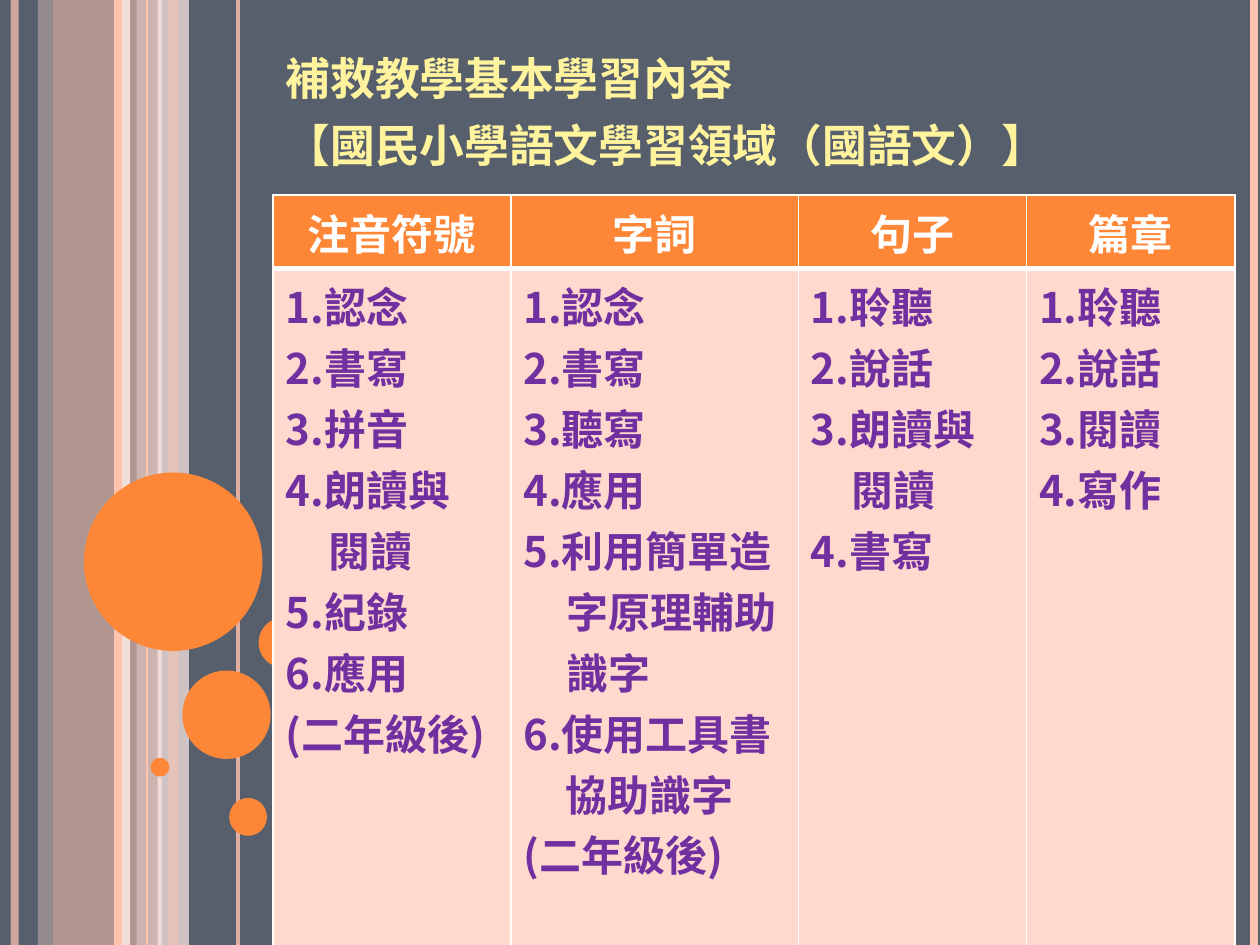
from dataclasses import dataclass

from lxml import etree
from pptx import Presentation
from pptx.dml.color import RGBColor
from pptx.enum.shapes import MSO_CONNECTOR, MSO_SHAPE
from pptx.enum.text import MSO_ANCHOR, MSO_AUTO_SIZE, PP_ALIGN
from pptx.oxml.ns import qn
from pptx.util import Pt

RECTANGLE = MSO_SHAPE.RECTANGLE
OVAL = MSO_SHAPE.OVAL
STRAIGHT = MSO_CONNECTOR.STRAIGHT
BOTTOM = MSO_ANCHOR.BOTTOM
NO_AUTOFIT = MSO_AUTO_SIZE.NONE
LEFT = PP_ALIGN.LEFT
CENTER = PP_ALIGN.CENTER

SLATE = RGBColor(0x57, 0x5F, 0x6D)
ORANGE = RGBColor(0xFE, 0x86, 0x37)
SALMON = RGBColor(0xFE, 0xC3, 0xAE)
PEACH = RGBColor(0xFF, 0xD9, 0xCE)
CREAM = RGBColor(0xFF, 0xED, 0xE8)
YELLOW = RGBColor(0xFF, 0xF3, 0x9D)
PURPLE = RGBColor(0x70, 0x30, 0xA0)
WHITE = RGBColor(0xFF, 0xFF, 0xFF)

FONT = "Noto Sans CJK SC"
SLIDE_WIDTH, SLIDE_HEIGHT = 720, 540
TABLE_LEFT, TABLE_TOP = 156, 111.5
HEADER_HEIGHT, BODY_HEIGHT = 42, 390


@dataclass
class Band:
    left: float
    width: float
    color: RGBColor
    opacity: int


@dataclass
class Stripe:
    x: float
    width: float
    color: RGBColor
    opacity: int = 100


@dataclass
class Bubble:
    left: float
    top: float
    diameter: float


@dataclass
class Item:
    text: str
    margin: float = 0
    indent: float = 0


@dataclass
class Column:
    heading: str
    width: float
    items: list[Item]


BANDS = [
    Band(30, 48, SALMON, 54),
    Band(21.6, 8.2, PEACH, 36),
    Band(78, 14.4, PEACH, 70),
    Band(90, 18, CREAM, 71),
]
STRIPES = [
    Stripe(8.4, 4.5, SALMON, 73),
    Stripe(72, 4.5, CREAM, 83),
    Stripe(67.2, 4.5, SALMON),
    Stripe(136, 2.25, SALMON, 82),
    Stripe(84, 0.75, SALMON),
    Stripe(716.4, 4.5, SALMON),
]
FRONT_BAND = Band(96, 6, SALMON, 51)
BUBBLES = [
    Bubble(48, 270, 102),
    Bubble(104.2, 383.2, 50.5),
    Bubble(86, 433, 10.8),
    Bubble(131, 456, 21.6),
    Bubble(147.8, 352.8, 28.8),
]
COLUMNS = [
    Column("注音符號", 136, [
        Item("1.認念"), Item("2.書寫"), Item("3.拼音"), Item("4.朗讀與"),
        Item("閱讀", 24.5), Item("5.紀錄"), Item("6.應用"), Item("(二年級後)"),
    ]),
    Column("字詞", 164.2, [
        Item("1.認念"), Item("2.書寫"), Item("3.聽寫"), Item("4.應用"),
        Item("5.利用簡單造字原理輔助識字", 24.5, -24.5),
        Item("6.使用工具書協助識字", 24, -24),
        Item("(二年級後)", 24, -24),
    ]),
    Column("句子", 130.5, [
        Item("1.聆聽"), Item("2.說話"),
        Item("3.朗讀與閱讀", 23, -23), Item("4.書寫"),
    ]),
    Column("篇章", 119, [
        Item("1.聆聽"), Item("2.說話"), Item("3.閱讀"), Item("4.寫作"),
    ]),
]


def set_opacity(properties, percent: int) -> None:
    if percent < 100:
        color = next(properties.iter(qn("a:srgbClr")))
        etree.SubElement(color, qn("a:alpha"), val=str(percent * 1000))


def add_filled_shape(slide, kind, left: float, top: float, width: float,
                     height: float, color: RGBColor, opacity: int = 100) -> None:
    shape = slide.shapes.add_shape(kind, Pt(left), Pt(top), Pt(width), Pt(height))
    shape.shadow.inherit = False
    shape.fill.solid()
    shape.fill.fore_color.rgb = color
    shape.line.fill.background()
    set_opacity(shape._element.spPr, opacity)


def add_band(slide, band: Band) -> None:
    add_filled_shape(slide, RECTANGLE, band.left, 0, band.width, SLIDE_HEIGHT,
                     band.color, band.opacity)


def add_stripe(slide, stripe: Stripe) -> None:
    connector = slide.shapes.add_connector(
        STRAIGHT, Pt(stripe.x), Pt(0), Pt(stripe.x), Pt(SLIDE_HEIGHT))
    connector.line.color.rgb = stripe.color
    connector.line.width = Pt(stripe.width)
    properties = connector._element.spPr
    set_opacity(properties, stripe.opacity)
    etree.SubElement(properties, qn("a:effectLst"))


def format_runs(paragraph, size: float, color: RGBColor, small_caps: bool = False) -> None:
    for run in paragraph.runs:
        run.font.name = FONT
        run.font.size = Pt(size)
        run.font.bold = True
        run.font.color.rgb = color
        properties = run._r.get_or_add_rPr()
        properties.find(qn("a:latin")).addnext(
            properties.makeelement(qn("a:ea"), {"typeface": FONT}))
        if small_caps:
            properties.set("cap", "small")


def add_title(slide) -> None:
    title = slide.shapes.title
    title.left, title.top, title.width, title.height = Pt(156), Pt(15), Pt(533), Pt(88)
    frame = title.text_frame
    frame.text = "補救教學基本學習內容\v【國民小學語文學習領域（國語文）】"
    frame.auto_size = NO_AUTOFIT
    frame.vertical_anchor = BOTTOM
    paragraph = frame.paragraphs[0]
    paragraph.alignment = LEFT
    format_runs(paragraph, 32, YELLOW, small_caps=True)


def style_cell(cell, fill: RGBColor, top_border: float, bottom_border: float) -> None:
    properties = cell._tc.get_or_add_tcPr()
    borders = {"lnL": 1, "lnR": 1, "lnT": top_border, "lnB": bottom_border}
    for side, width in borders.items():
        line = etree.SubElement(properties, qn(f"a:{side}"), w=str(Pt(width)))
        solid = etree.SubElement(line, qn("a:solidFill"))
        etree.SubElement(solid, qn("a:srgbClr"), val=str(WHITE))
    cell.fill.solid()
    cell.fill.fore_color.rgb = fill


def add_content_table(slide) -> None:
    width = sum(column.width for column in COLUMNS)
    table = slide.shapes.add_table(
        2, len(COLUMNS), Pt(TABLE_LEFT), Pt(TABLE_TOP), Pt(width),
        Pt(HEADER_HEIGHT + BODY_HEIGHT)).table
    table.horz_banding = False
    table.rows[0].height, table.rows[1].height = Pt(HEADER_HEIGHT), Pt(BODY_HEIGHT)
    for index, column in enumerate(COLUMNS):
        table.columns[index].width = Pt(column.width)
        header, body = table.cell(0, index), table.cell(1, index)
        style_cell(header, ORANGE, 1, 3)
        style_cell(body, PEACH, 3, 1)
        header.text_frame.text = column.heading
        heading = header.text_frame.paragraphs[0]
        heading.alignment = CENTER
        format_runs(heading, 24, WHITE)
        body.text_frame.text = "\n".join(item.text for item in column.items)
        for paragraph, item in zip(body.text_frame.paragraphs, column.items):
            properties = paragraph._p.get_or_add_pPr()
            properties.set("marL", str(Pt(item.margin)))
            properties.set("indent", str(Pt(item.indent)))
            format_runs(paragraph, 24, PURPLE)


def main() -> None:
    presentation = Presentation()
    presentation.slide_width, presentation.slide_height = Pt(SLIDE_WIDTH), Pt(SLIDE_HEIGHT)
    slide = presentation.slides.add_slide(presentation.slide_layouts[5])
    slide.background.fill.solid()
    slide.background.fill.fore_color.rgb = SLATE
    for band in BANDS:
        add_band(slide, band)
    for stripe in STRIPES:
        add_stripe(slide, stripe)
    add_band(slide, FRONT_BAND)
    for bubble in BUBBLES:
        add_filled_shape(slide, OVAL, bubble.left, bubble.top,
                         bubble.diameter, bubble.diameter, ORANGE)
    add_title(slide)
    add_content_table(slide)
    presentation.save("out.pptx")


if __name__ == "__main__":
    main()
